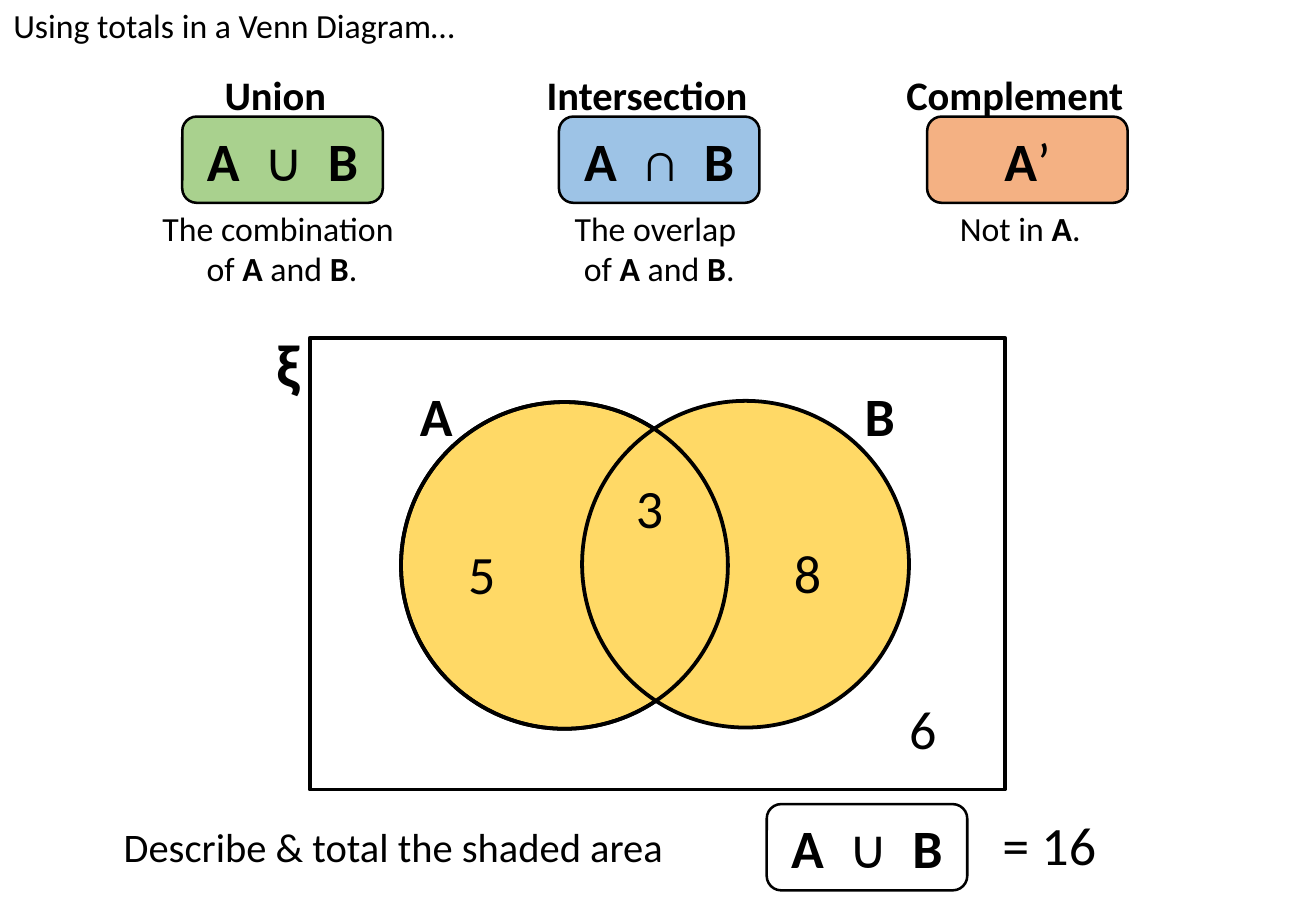
from pptx import Presentation
from pptx.dml.color import RGBColor
from pptx.enum.shapes import MSO_SHAPE
from pptx.enum.text import MSO_ANCHOR, PP_ALIGN
from pptx.util import Emu, Pt

PX = 9144  # 100 px to the inch
BLACK, WHITE, SHADED = "000000", "FFFFFF", "FFD966"
CARD_WIDTH, CARD_HEIGHT = 165, 71
CIRCLE = 269
UNION = "*A*  ∪  *B*"

# card left, colour, symbol, heading and its box, note lines and their box
DEFINITIONS = [
    (763, "F4B183", "*A*’", "*Complement*", (736, 53, 219, 50),
     ["Not in *A*."], (780, 166, 131, 44), PP_ALIGN.LEFT),
    (460, "9DC3E6", "*A*  ∩  *B*", "*Intersection*", (440, 53, 204, 50),
     ["The overlap ", "of *A* and *B*."], (455, 166, 175, 77), PP_ALIGN.CENTER),
    (150, "A9D18E", UNION, "*Union*", (175, 53, 114, 50),
     ["The combination ", "of *A* and *B*."], (113, 166, 238, 77), PP_ALIGN.CENTER),
]
VENN_LABELS = [
    ("*A*", (298, 310, 122, 64)),
    ("*B*", (672, 310, 104, 64)),
    ("3", (495, 386, 79, 64)),
    ("8", (625, 439, 79, 64)),
    ("5", (357, 440, 79, 64)),
    ("6", (720, 568, 79, 64)),
]


def color(value):
    return RGBColor.from_string(value)


def px(*lengths):
    return [Emu(length * PX) for length in lengths]


def set_attributes(target, values):
    for name, value in values.items():
        setattr(target, name, value)


def write(shape, lines, size, align=PP_ALIGN.LEFT, anchor=MSO_ANCHOR.TOP):
    """Fill the shape with lines of text; parts between asterisks are bold."""
    frame = shape.text_frame
    set_attributes(frame, {"word_wrap": True, "vertical_anchor": anchor})
    for index, line in enumerate(lines):
        paragraph = frame.add_paragraph() if index else frame.paragraphs[0]
        paragraph.alignment = align
        for part, text in enumerate(line.split("*")):
            if text:
                run = paragraph.add_run()
                run.text = text
                set_attributes(run.font, {"name": "Calibri", "size": Pt(size),
                                          "bold": part % 2 == 1})
                run.font.color.rgb = color(BLACK)


def add_text(slide, box, lines, size, align=PP_ALIGN.LEFT):
    write(slide.shapes.add_textbox(*px(*box)), lines, size, align)


def add_outlined(slide, kind, box, fill=None, line_width=2.25):
    shape = slide.shapes.add_shape(kind, *px(*box))
    shape.shadow.inherit = False
    if fill:
        shape.fill.solid()
        shape.fill.fore_color.rgb = color(fill)
    else:
        shape.fill.background()
    shape.line.color.rgb = color(BLACK)
    shape.line.width = Pt(line_width)
    return shape


def add_card(slide, left, top, fill, symbol):
    card = add_outlined(slide, MSO_SHAPE.ROUNDED_RECTANGLE,
                        (left, top, CARD_WIDTH, CARD_HEIGHT), fill, 1.5)
    write(card, [symbol], 32, PP_ALIGN.CENTER, MSO_ANCHOR.MIDDLE)


def add_title(slide, text):
    title = slide.shapes.title
    set_attributes(title, dict(zip(("left", "top", "width", "height"),
                                   px(1, -1, 387, 44))))
    write(title, [text], 20)


def add_venn(slide):
    circle_a = (330, 331, CIRCLE, CIRCLE)
    circle_b = (479, 330, CIRCLE, CIRCLE)
    add_outlined(slide, MSO_SHAPE.RECTANGLE, (255, 278, 572, 372), WHITE)
    for box, fill in ((circle_a, SHADED), (circle_b, SHADED), (circle_a, None)):
        add_outlined(slide, MSO_SHAPE.OVAL, box, fill)
    add_text(slide, (218, 264, 48, 71), ["*ξ*"], 36)
    for text, box in VENN_LABELS:
        add_text(slide, box, [text], 32, PP_ALIGN.CENTER)


def add_definitions(slide):
    for left, fill, symbol, heading, heading_box, note, note_box, align in DEFINITIONS:
        add_card(slide, left, 96, fill, symbol)
        add_text(slide, note_box, note, 20, align)
        add_text(slide, heading_box, [heading], 24)


def add_question(slide):
    add_text(slide, (92, 672, 484, 50), ["Describe & total the shaded area"], 24)
    add_card(slide, 631, 662, WHITE, UNION)
    add_text(slide, (815, 663, 98, 64), ["= 16"], 32)


def main():
    presentation = Presentation()
    set_attributes(presentation, dict(zip(("slide_width", "slide_height"), px(1083, 750))))
    slide = presentation.slides.add_slide(presentation.slide_layouts[5])
    add_title(slide, "Using totals in a Venn Diagram…")
    add_venn(slide)
    add_definitions(slide)
    add_question(slide)
    presentation.save("out.pptx")


if __name__ == "__main__":
    main()
